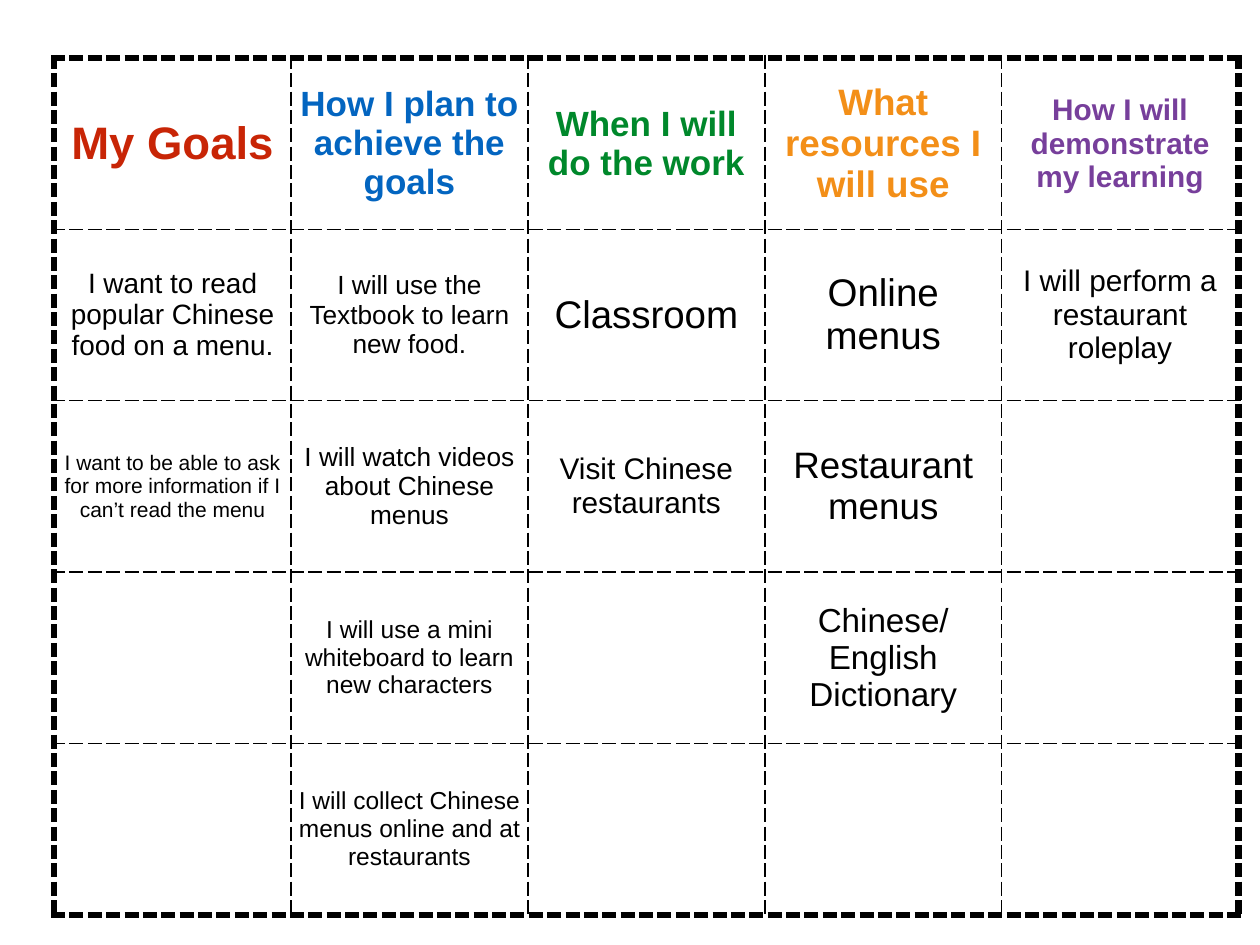
from lxml.etree import SubElement
from pptx import Presentation
from pptx.dml.color import RGBColor
from pptx.enum.text import MSO_ANCHOR, PP_ALIGN
from pptx.oxml.ns import qn
from pptx.util import Inches, Pt

BLACK = "000000"
FONT = "Arial"
THIN, THICK = 1, 4  # border widths in points
LEFT, TOP = 0.43, 0.46
COLUMN_WIDTH, ROW_HEIGHT = 1.88, 1.36
CELL_INSET = 0.06

# (heading, size, colour)
HEADINGS = [
    ("My Goals", 26, "C82506"),
    ("How I plan to achieve the goals", 20, "0365C0"),
    ("When I will do the work", 20, "00882B"),
    ("What resources I will use", 21, "F38F18"),
    ("How I will demonstrate my learning", 17, "773F9B"),
]
# One list per heading, read downwards: (entry, size)
ENTRIES = [
    [("I want to read popular Chinese food on a menu.", 16),
     ("I want to be able to ask for more information if I can’t read the menu", 12)],
    [("I will use the Textbook to learn new food.", 15),
     ("I will watch videos about Chinese menus", 15),
     ("I will use a mini whiteboard to learn new characters", 14),
     ("I will collect Chinese menus online and at restaurants", 14)],
    [("Classroom", 22), ("Visit Chinese restaurants", 17)],
    [("Online menus", 22), ("Restaurant menus", 21),
     ("Chinese/ English Dictionary", 19)],
    [("I will perform a restaurant roleplay", 17)],
]
COLUMNS = len(HEADINGS)
ROWS = 1 + max(len(entries) for entries in ENTRIES)


def rgb(hex_colour):
    return RGBColor.from_string(hex_colour)


def write(cell, text, size, colour=BLACK, bold=False):
    paragraph = cell.text_frame.paragraphs[0]
    paragraph.text = text
    paragraph.alignment = PP_ALIGN.CENTER
    font = paragraph.font
    font.name, font.size, font.bold = FONT, Pt(size), bold
    font.color.rgb = rgb(colour)


def add_dashed_borders(cell, row, column):
    """Dash all four edges, thick where the cell meets the table's outline."""
    on_outline = {
        "a:lnL": column == 0,
        "a:lnR": column == COLUMNS - 1,
        "a:lnT": row == 0,
        "a:lnB": row == ROWS - 1,
    }
    properties = cell._tc.get_or_add_tcPr()
    for edge, outer in on_outline.items():
        width = Pt(THICK if outer else THIN)
        line = SubElement(properties, qn(edge), w=str(int(width)))
        fill = SubElement(line, qn("a:solidFill"))
        SubElement(fill, qn("a:srgbClr"), val=BLACK)
        SubElement(line, qn("a:prstDash"), val="dash")


def format_cell(cell, row, column):
    cell.vertical_anchor = MSO_ANCHOR.MIDDLE
    cell.margin_left = cell.margin_right = Inches(CELL_INSET)
    cell.margin_top = cell.margin_bottom = Inches(CELL_INSET)
    add_dashed_borders(cell, row, column)
    cell.fill.background()


def main():
    presentation = Presentation()
    presentation.slide_width, presentation.slide_height = Inches(10), Inches(7.5)
    slide = presentation.slides.add_slide(presentation.slide_layouts[6])
    plan = slide.shapes.add_table(
        ROWS, COLUMNS, Inches(LEFT), Inches(TOP),
        Inches(COLUMNS * COLUMN_WIDTH), Inches(ROWS * ROW_HEIGHT)).table
    plan.first_row = plan.horz_banding = False

    for table_column in plan.columns:
        table_column.width = Inches(COLUMN_WIDTH)
    for table_row in plan.rows:
        table_row.height = Inches(ROW_HEIGHT)
    for row in range(ROWS):
        for column in range(COLUMNS):
            format_cell(plan.cell(row, column), row, column)

    for column, (heading, entries) in enumerate(zip(HEADINGS, ENTRIES)):
        write(plan.cell(0, column), *heading, bold=True)
        for row, entry in enumerate(entries, start=1):
            write(plan.cell(row, column), *entry)

    presentation.save("out.pptx")


if __name__ == "__main__":
    main()
